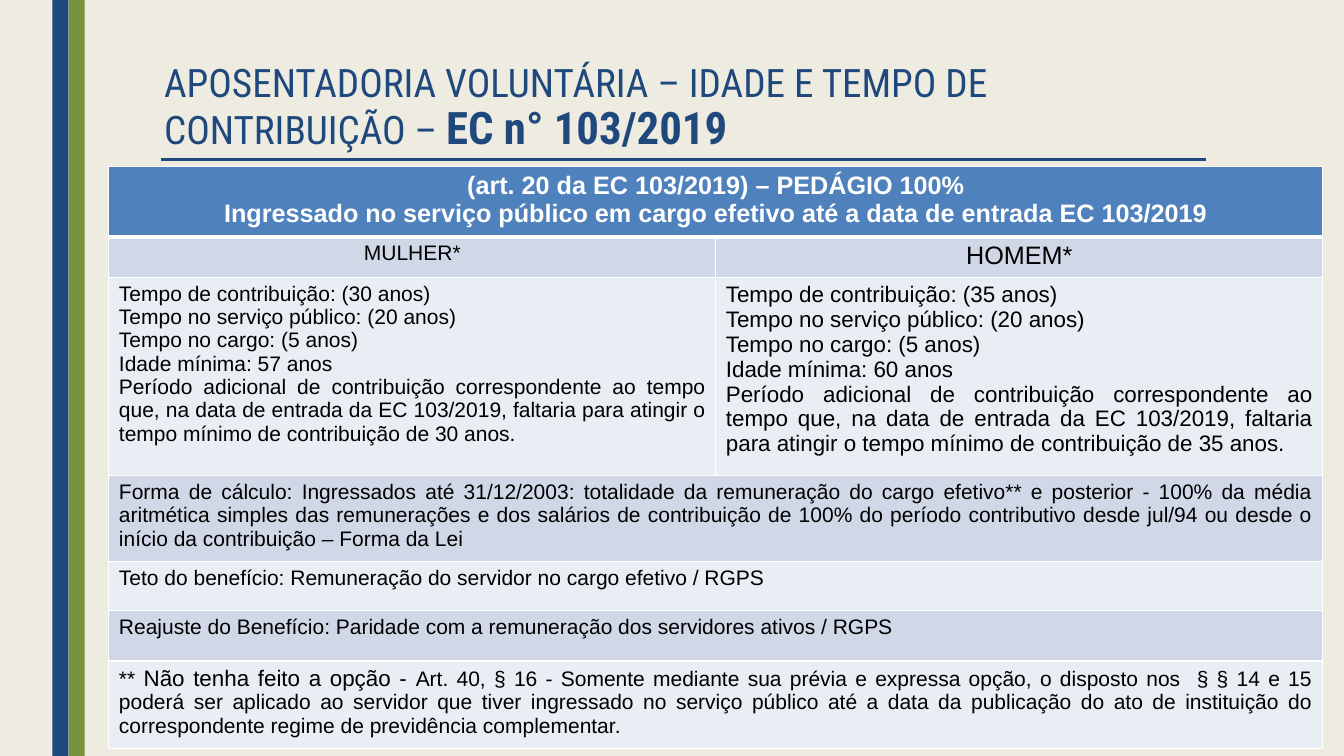
from lxml import etree
from pptx import Presentation
from pptx.dml.color import RGBColor
from pptx.enum.shapes import MSO_CONNECTOR, MSO_SHAPE
from pptx.enum.text import MSO_ANCHOR, PP_ALIGN
from pptx.oxml.ns import qn
from pptx.util import Emu, Pt

RECTANGLE = MSO_SHAPE.RECTANGLE
STRAIGHT = MSO_CONNECTOR.STRAIGHT
TOP = MSO_ANCHOR.TOP
LEFT, CENTER, JUSTIFY = PP_ALIGN.LEFT, PP_ALIGN.CENTER, PP_ALIGN.JUSTIFY

PX = 9144
NAVY, GREEN, BLUE, CREAM = "1F497D", "76923C", "4F81BD", "EEECE1"
BAND_DARK, BAND_LIGHT, WHITE, BLACK = "D0D8E8", "E9EDF4", "FFFFFF", "000000"
TITLE_FONT, BODY_FONT = "Roboto Condensed", "Arial"


def px(length):
    return Emu(length * PX)


def color(value):
    return RGBColor.from_string(value)


def requirements(contribution, age):
    return [
        f"Tempo de contribuição: ({contribution} anos)",
        "Tempo no serviço público: (20 anos)",
        "Tempo no cargo: (5 anos)",
        f"Idade mínima: {age} anos",
        "Período adicional de contribuição correspondente ao tempo que, na data de "
        "entrada da EC 103/2019, faltaria para atingir o tempo mínimo de contribuição "
        f"de {contribution} anos.",
    ]


def lines(texts, size):
    return [[(text, size)] for text in texts]


class SlideBuilder:
    """Draws styled elements on the current slide."""

    def __init__(self, slide):
        self.slide = slide
        self.shapes = slide.shapes

    def background(self, fill):
        self.slide.background.fill.solid()
        self.slide.background.fill.fore_color.rgb = color(fill)

    def stripe(self, left, top, width, height, fill):
        stripe = self.shapes.add_shape(RECTANGLE, px(left), px(top), px(width), px(height))
        stripe.shadow.inherit = False
        stripe.fill.solid()
        stripe.fill.fore_color.rgb = color(fill)
        stripe.line.fill.background()

    def rule(self, left, right, top, stroke, width):
        rule = self.shapes.add_connector(STRAIGHT, px(left), px(top), px(right), px(top))
        rule.line.color.rgb = color(stroke)
        rule.line.width = Pt(width)
        etree.SubElement(rule._element.spPr, qn("a:effectLst"))

    def span(self, para, text, size, font, ink, bold):
        span = para.add_run()
        span.text = text
        span.font.size = Pt(size)
        span.font.name = font
        span.font.bold = bold
        span.font.color.rgb = color(ink)

    def title(self, left, top, width, height, spans):
        box = self.shapes.add_textbox(px(left), px(top), px(width), px(height))
        frame = box.text_frame
        frame.word_wrap = True
        frame.vertical_anchor = TOP
        para = frame.paragraphs[0]
        para.alignment = LEFT
        para.line_spacing = 0.89
        for text, size, bold in spans:
            self.span(para, text, size, TITLE_FONT, NAVY, bold)

    def border(self, cell, side, width):
        properties = cell._tc.get_or_add_tcPr()
        line = etree.SubElement(properties, qn(f"a:ln{side}"), w=str(Pt(width)))
        fill = etree.SubElement(line, qn("a:solidFill"))
        etree.SubElement(fill, qn("a:srgbClr"), val=WHITE)

    def cell(self, cell, row, paragraphs):
        header = row == 0
        widths = {"L": 1, "R": 1, "T": 3 if row == 1 else 1, "B": 3 if header else 1}
        for side, width in widths.items():
            self.border(cell, side, width)
        cell.fill.solid()
        band = BAND_DARK if row % 2 else BAND_LIGHT
        cell.fill.fore_color.rgb = color(BLUE if header else band)
        frame = cell.text_frame
        for index, spans in enumerate(paragraphs):
            para = frame.add_paragraph() if index else frame.paragraphs[0]
            para.alignment = CENTER if row < 2 else JUSTIFY
            for text, size in spans:
                self.span(para, text, size, BODY_FONT, WHITE if header else BLACK, header)

    def table(self, left, top, column_width, rows):
        columns = max(len(contents) for _, contents in rows)
        total = sum(height for height, _ in rows)
        frame = self.shapes.add_table(
            len(rows), columns, px(left), px(top), px(column_width * columns), px(total)
        )
        table = frame.table
        for column in table.columns:
            column.width = px(column_width)
        for row, (height, contents) in enumerate(rows):
            table.rows[row].height = px(height)
            if len(contents) < columns:
                table.cell(row, 0).merge(table.cell(row, columns - 1))
            for column, paragraphs in enumerate(contents):
                self.cell(table.cell(row, column), row, paragraphs)


ROWS = [
    (70, [lines([
        "(art. 20 da EC 103/2019) – PEDÁGIO 100%",
        "Ingressado no serviço público em cargo efetivo até a data de entrada EC 103/2019",
    ], 18)]),
    (40, [lines(["MULHER*"], 15), lines(["HOMEM*"], 18)]),
    (189, [lines(requirements(30, 57), 15), lines(requirements(35, 60), 16)]),
    (81, [lines([
        "Forma de cálculo: Ingressados até 31/12/2003: totalidade da remuneração do cargo "
        "efetivo** e posterior - 100% da média aritmética simples das remunerações e dos "
        "salários de contribuição de 100% do período contributivo desde jul/94 ou desde o "
        "início da contribuição – Forma da Lei",
    ], 15)]),
    (49, [lines(["Teto do benefício: Remuneração do servidor no cargo efetivo / RGPS"], 15)]),
    (50, [lines([
        "Reajuste do Benefício: Paridade com a remuneração dos servidores ativos / RGPS",
    ], 15)]),
    (83, [[[
        ("** ", 15),
        ("Não tenha feito a opção - ", 16),
        ("Art. 40, § 16 - Somente mediante sua prévia e expressa opção, o disposto nos  "
         "§ § 14 e 15 poderá ser aplicado ao servidor que tiver ingressado no serviço "
         "público até a data da publicação do ato de instituição do correspondente regime "
         "de previdência complementar.", 15),
    ]]]),
]


def main():
    deck = Presentation()
    deck.slide_width, deck.slide_height = px(1333), px(750)
    page = SlideBuilder(deck.slides.add_slide(deck.slide_layouts[6]))
    page.background(CREAM)
    page.stripe(68, 0, 16, 750, GREEN)
    page.stripe(52, 0, 16, 750, NAVY)
    page.rule(160, 1196, 158, NAVY, 2.25)
    page.title(153, 59, 1039, 79, [
        ("APOSENTADORIA VOLUNTÁRIA – IDADE E TEMPO DE CONTRIBUIÇÃO – ", 28, False),
        ("EC n° 103/2019", 32, True),
    ])
    page.table(108, 165, 602, ROWS)
    deck.save("out.pptx")


if __name__ == "__main__":
    main()
